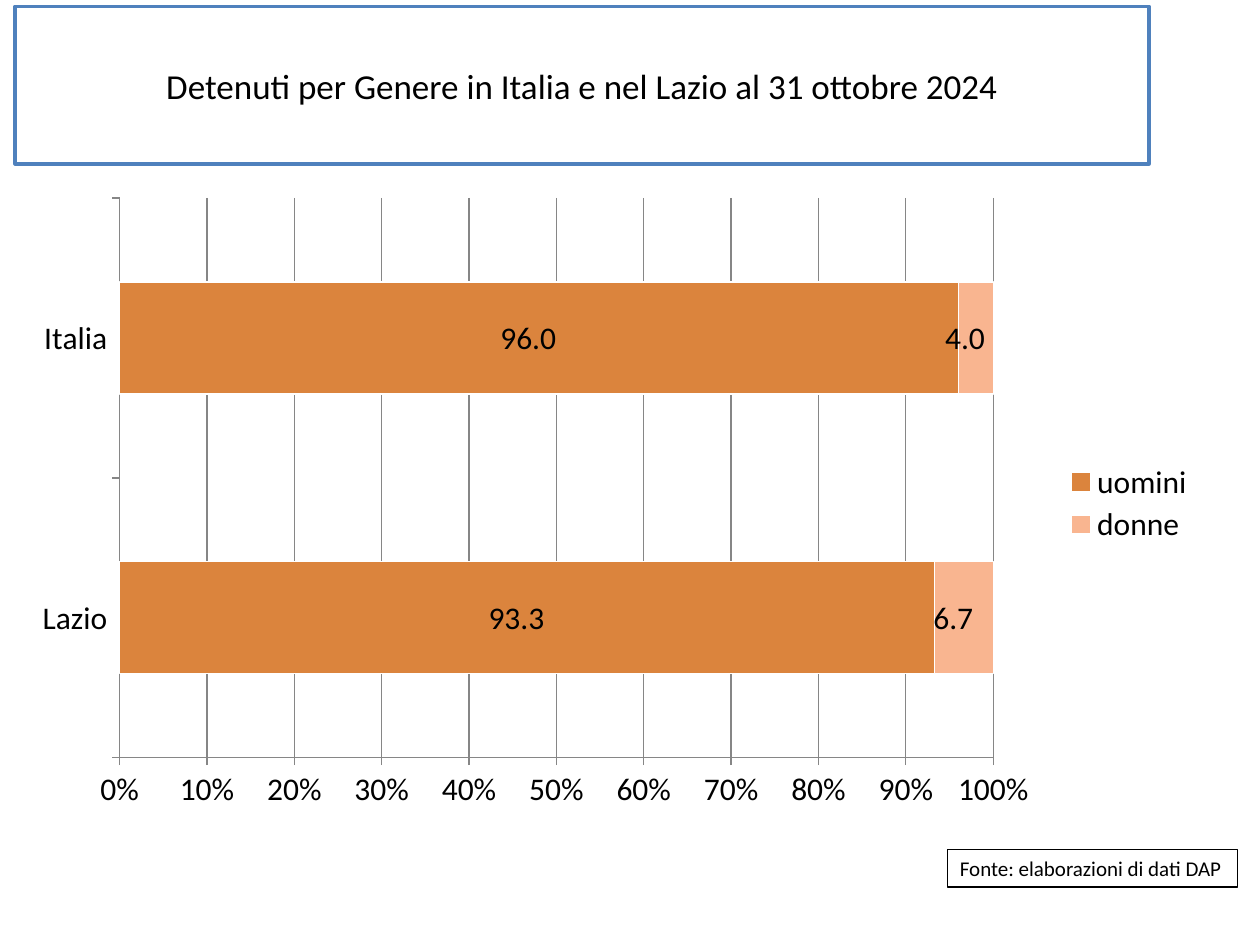
from lxml import etree
from pptx import Presentation
from pptx import util as u
from pptx.chart.data import CategoryChartData
from pptx.dml.color import RGBColor
from pptx.enum import chart as ch, shapes, text
from pptx.oxml import parse_xml
from pptx.oxml.ns import nsdecls

# Content
TITLE = "Detenuti per Genere in Italia e nel Lazio al 31 ottobre 2024"
SOURCE = "Fonte: elaborazioni di dati DAP"
REGIONS = ["Lazio", "Italia"]
GENDERS = [
    ("uomini", (93.3, 96.0), "DB843D"),
    ("donne", (6.7, 4.0), "F9B590"),
]
FONT = "Calibri"
AXIS_GREY = "868686"
VALUE_FORMAT = r"_-* #,##0.0\ _€_-"

prs = Presentation()
prs.slide_width, prs.slide_height = u.Pt(720), u.Pt(540)
slide = prs.slides.add_slide(prs.slide_layouts[6])


def rgb(code):
    return RGBColor.from_string(code)


def style_font(font, size):
    font.name, font.size, font.color.rgb = FONT, u.Pt(size), rgb("000000")


def style_line(line, color, width=0.75):
    line.color.rgb, line.width = rgb(color), u.Pt(width)


def add_text(words, *, box, size, border, width, align, anchor, wrap):
    """Add a white bordered rectangle holding one paragraph."""
    panel = slide.shapes.add_shape(shapes.MSO_SHAPE.RECTANGLE, *map(u.Pt, box))
    panel.shadow.inherit = False
    panel.fill.solid()
    panel.fill.fore_color.rgb = rgb("FFFFFF")
    style_line(panel.line, border, width)
    frame = panel.text_frame
    frame.word_wrap, frame.vertical_anchor = wrap, anchor
    paragraph = frame.paragraphs[0]
    paragraph.text, paragraph.alignment = words, align
    style_font(paragraph.runs[0].font, size)


def place(part, x, y, w, h, inner=False):
    """Fix a chart part at fractions of the chart area."""
    for old in part.findall("{*}layout"):
        part.remove(old)
    target = '<c:layoutTarget val="inner"/>' if inner else ""
    sizes = "".join(f'<c:{tag} val="{value}"/>'
                    for tag, value in zip("xywh", (x, y, w, h)))
    layout = parse_xml(
        f'<c:layout {nsdecls("c")}><c:manualLayout>{target}'
        f'<c:xMode val="edge"/><c:yMode val="edge"/>{sizes}'
        "</c:manualLayout></c:layout>")
    # The layout opens the plot area and follows the position of the legend
    part.insert(0 if inner else 1, layout)


# Title and source
add_text(TITLE, box=(8.64, 3.6, 648, 90), size=20, border="4F81BD", width=2,
         align=text.PP_ALIGN.CENTER, anchor=text.MSO_ANCHOR.MIDDLE, wrap=True)
add_text(SOURCE, box=(541.44, 485.28, 165.6, 21.6), size=12, border="000000",
         width=0.75, align=text.PP_ALIGN.LEFT, anchor=text.MSO_ANCHOR.TOP,
         wrap=False)

# Chart of shares by gender
shares = CategoryChartData()
shares.categories = REGIONS
for gender, values, _ in GENDERS:
    shares.add_series(gender, values)
chart = slide.shapes.add_chart(
    ch.XL_CHART_TYPE.BAR_STACKED_100,
    *map(u.Pt, (14.4, 105.84, 674.64, 363.6)), shares).chart
chart.has_title = False
style_font(chart.font, 18)

bars = chart.plots[0]
bars.gap_width, bars.overlap, bars.vary_by_categories = 150, 100, False
for series, (_, _, color) in zip(bars.series, GENDERS):
    series.format.fill.solid()
    series.format.fill.fore_color.rgb = rgb(color)
    style_line(series.format.line, "FFFFFF")
    labels = series.data_labels
    labels.show_value = True
    labels.position = ch.XL_LABEL_POSITION.CENTER
    labels.number_format, labels.number_format_is_linked = VALUE_FORMAT, False
    style_font(labels.font, 18)

# Axes
for axis in (chart.category_axis, chart.value_axis):
    axis.major_tick_mark = ch.XL_TICK_MARK.OUTSIDE
    axis.minor_tick_mark = ch.XL_TICK_MARK.NONE
    style_line(axis.format.line, AXIS_GREY)
percent = chart.value_axis
percent.minimum_scale, percent.maximum_scale, percent.major_unit = 0, 1, 0.1
percent.tick_labels.number_format = "0%"
percent.tick_labels.number_format_is_linked = False
percent.has_major_gridlines = True
style_line(percent.major_gridlines.format.line, AXIS_GREY)

# Legend and plot position
chart.has_legend = True
chart.legend.position = ch.XL_LEGEND_POSITION.RIGHT
chart.legend.include_in_layout = False
style_font(chart.legend.font, 18)
plot_area = chart.category_axis._element.getparent()
place(plot_area, 0.08, 0.02, 0.74, 0.88, inner=True)
place(chart.legend._element, 0.88, 0.43, 0.11, 0.14)

prs.save("out.pptx")
